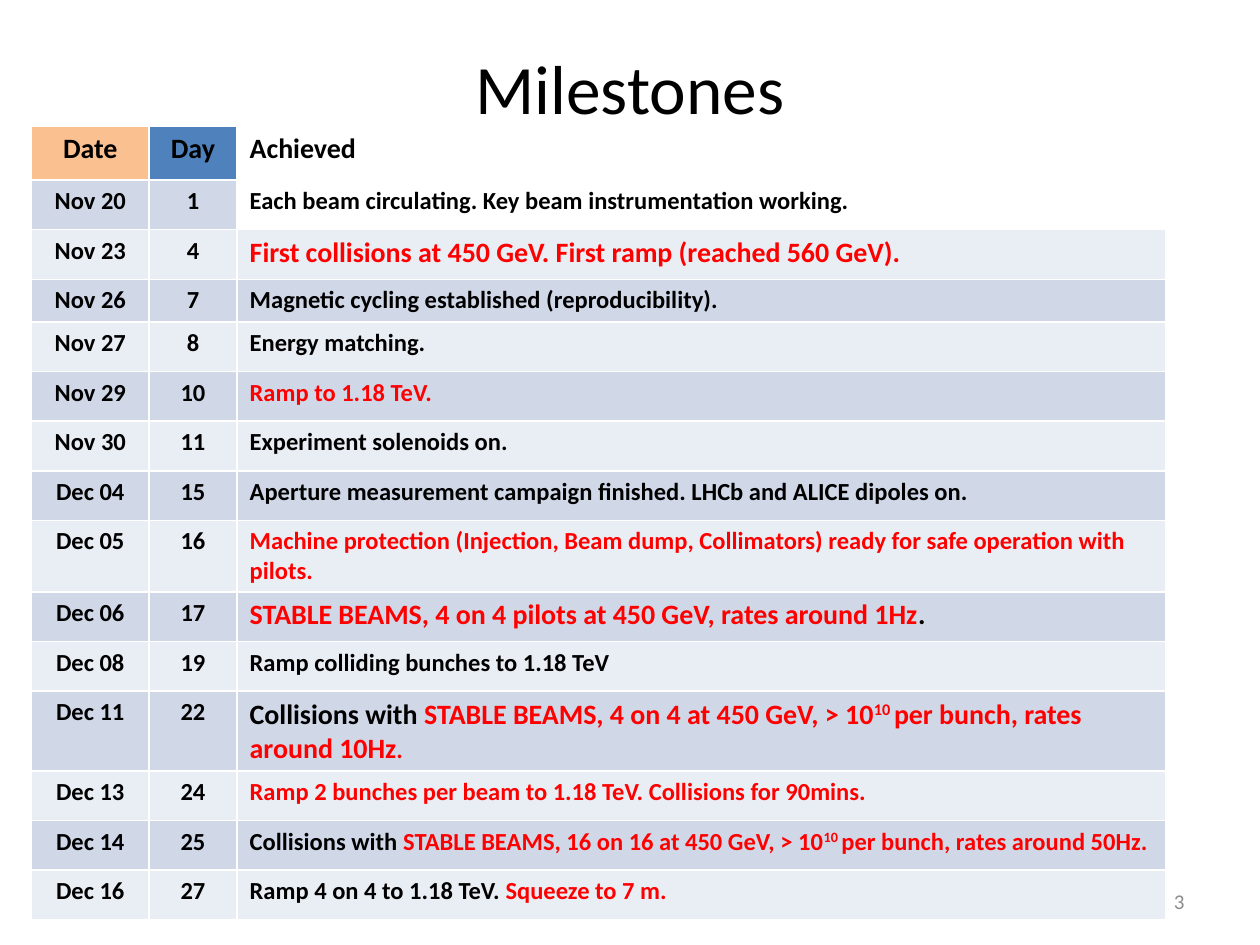
from lxml import etree
from pptx import Presentation
from pptx.dml.color import RGBColor
from pptx.enum import text
from pptx.oxml.ns import qn
from pptx.util import Cm, Pt

BLACK, RED, WHITE = "000000", "FF0000", "FFFFFF"
BANDS = ("D0D8E8", "E9EDF4")


def add_run(p, words, size, colour, bold=True, raised=False):
    r = p.add_run()
    r.text = words
    r.font.name = "Calibri"
    r.font.size = Pt(size)
    r.font.bold = bold
    r.font.color.rgb = RGBColor.from_string(colour)
    if raised:
        r._r.get_or_add_rPr().set("baseline", "30000")


def style_cell(cell, colour):
    tcPr = cell._tc.get_or_add_tcPr()
    for side in ("a:lnL", "a:lnR", "a:lnT", "a:lnB"):
        ln = etree.SubElement(tcPr, qn(side), w=str(Pt(1)))
        solid = etree.SubElement(ln, qn("a:solidFill"))
        etree.SubElement(solid, qn("a:srgbClr"), val=WHITE)
    cell.fill.solid()
    cell.fill.fore_color.rgb = RGBColor.from_string(colour)


# Date, day, then runs of (words, size, colour); "^" marks a superscript
milestones = [
    ("Nov 20", 1, [("Each beam circulating. Key beam instrumentation working.", 14, BLACK)]),
    ("Nov 23", 4, [("First collisions at 450 GeV. First ramp (reached 560 GeV).", 16, RED)]),
    ("Nov 26", 7, [("Magnetic cycling established (reproducibility).", 14, BLACK)]),
    ("Nov 27", 8, [("Energy matching.", 14, BLACK)]),
    ("Nov 29", 10, [("Ramp to 1.18 TeV.", 14, RED)]),
    ("Nov 30", 11, [("Experiment solenoids on.", 14, BLACK)]),
    ("Dec 04", 15, [("Aperture measurement campaign finished. LHCb and ALICE dipoles on.", 14, BLACK)]),
    ("Dec 05", 16, [("Machine protection (Injection, Beam dump, Collimators) ready for safe "
                     "operation with pilots.", 14, RED)]),
    ("Dec 06", 17, [("STABLE BEAMS, 4 on 4 pilots at 450 GeV, rates around 1Hz", 16, RED),
                    (".", 16, BLACK)]),
    ("Dec 08", 19, [("Ramp colliding bunches to 1.18 TeV", 14, BLACK)]),
    ("Dec 11", 22, [("Collisions with ", 16, BLACK),
                    ("STABLE BEAMS, 4 on 4 at 450 GeV, > 10", 16, RED), ("^10 ", 16, RED),
                    ("per bunch, rates around 10Hz", 16, RED), (".", 14, RED)]),
    ("Dec 13", 24, [("Ramp 2 bunches per beam to 1.18 TeV. Collisions for 90mins.", 14, RED)]),
    ("Dec 14", 25, [("Collisions with ", 14, BLACK),
                    ("STABLE BEAMS, 16 on 16 at 450 GeV, > 10", 14, RED), ("^10 ", 14, RED),
                    ("per bunch, rates around 50Hz.", 14, RED)]),
    ("Dec 16", 27, [("Ramp 4 on 4 to 1.18 TeV. ", 14, BLACK), ("Squeeze to 7 m.", 14, RED)]),
]

prs = Presentation()
prs.slide_width, prs.slide_height = Cm(25.4), Cm(19.05)
s = prs.slides.add_slide(prs.slide_layouts[5])

# Title
title = s.shapes.title
title.left, title.top, title.width, title.height = Cm(1.27), Cm(0.76), Cm(22.86), Cm(1.98)
tf = title.text_frame
tf.auto_size = text.MSO_AUTO_SIZE.NONE
tf.vertical_anchor = text.MSO_ANCHOR.MIDDLE
p = tf.paragraphs[0]
p.alignment = text.PP_ALIGN.CENTER
add_run(p, "Milestones", 39.6, BLACK, bold=False)

# Slide number
sp = s.shapes.add_textbox(Cm(18.2), Cm(17.66), Cm(5.93), Cm(1.01))
tf = sp.text_frame
tf.word_wrap = True
tf.vertical_anchor = text.MSO_ANCHOR.MIDDLE
p = tf.paragraphs[0]
p.alignment = text.PP_ALIGN.RIGHT
add_run(p, "3", 12, "8C8C8C", bold=False)

# Table grid
table = s.shapes.add_table(len(milestones) + 1, 3, Cm(0.64), Cm(2.54), Cm(22.86), Cm(15.93)).table
table.first_row = table.horz_banding = False
for column, width in zip(table.columns, (2.36, 1.78, 18.72)):
    column.width = Cm(width)
for row in table.rows:
    row.height = Cm(1)
table.rows[0].height = Cm(1.09)
table.rows[3].height = Cm(0.86)

# Header row
for i, (label, colour) in enumerate([("Date", "FAC090"), ("Day", "4F81BD"), ("Achieved", WHITE)]):
    cell = table.cell(0, i)
    style_cell(cell, colour)
    p = cell.text_frame.paragraphs[0]
    p.alignment = text.PP_ALIGN.CENTER if i < 2 else text.PP_ALIGN.LEFT
    add_run(p, label, 16, BLACK)

# Milestone rows, banded, with the first achievement left white
for n, (date, day, achieved) in enumerate(milestones):
    columns = ([(date, 14, BLACK)], [(str(day), 14, BLACK)], achieved)
    for i, runs in enumerate(columns):
        cell = table.cell(n + 1, i)
        style_cell(cell, WHITE if (n, i) == (0, 2) else BANDS[n % 2])
        p = cell.text_frame.paragraphs[0]
        p.alignment = text.PP_ALIGN.CENTER if i < 2 else text.PP_ALIGN.LEFT
        for words, size, colour in runs:
            add_run(p, words.lstrip("^"), size, colour, raised=words.startswith("^"))

prs.save("out.pptx")
